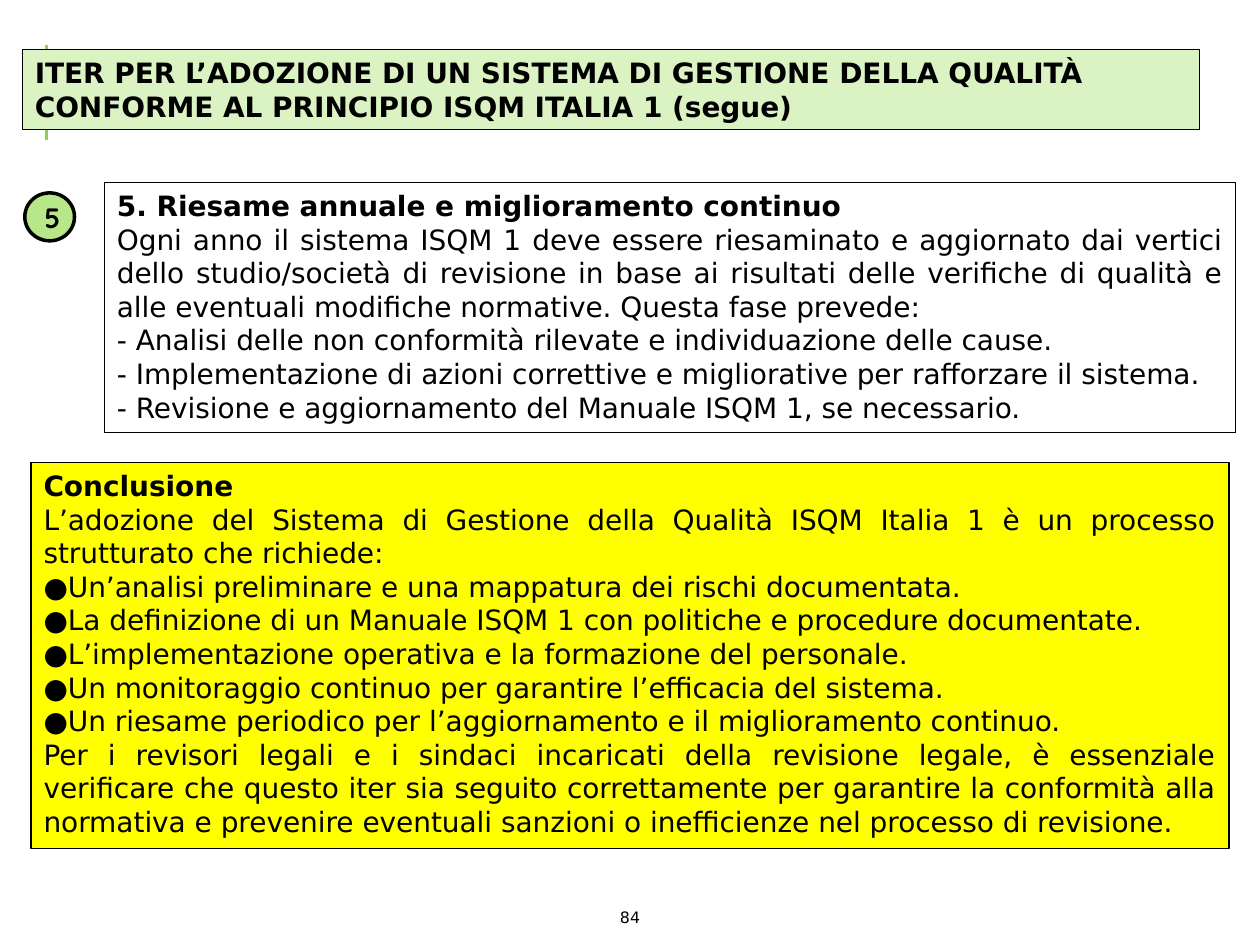
from pptx import Presentation
from pptx.dml.color import RGBColor
from pptx.enum.shapes import MSO_CONNECTOR, MSO_SHAPE
from pptx.enum.text import MSO_ANCHOR, MSO_AUTO_SIZE, PP_ALIGN
from pptx.oxml.ns import qn
from pptx.util import Pt
from lxml import etree

LEFT, CENTER, JUSTIFY = PP_ALIGN.LEFT, PP_ALIGN.CENTER, PP_ALIGN.JUSTIFY
TOP, MIDDLE = MSO_ANCHOR.TOP, MSO_ANCHOR.MIDDLE
RECTANGLE, OVAL = MSO_SHAPE.RECTANGLE, MSO_SHAPE.OVAL

COLORS = {
    "black": "000000",
    "accent": "8CD250",
    "title": "DBF3C2",
    "badge": "B8E789",
    "conclusion": "FFFF00",
}
BODY_FONT, BADGE_FONT = "DejaVu Sans", "Quicksand"

TITLE = ("ITER PER L’ADOZIONE DI UN SISTEMA DI GESTIONE DELLA QUALITÀ "
         "CONFORME AL PRINCIPIO ISQM ITALIA 1 (segue)")
REVIEW = [
    "5. Riesame annuale e miglioramento continuo",
    "Ogni anno il sistema ISQM 1 deve essere riesaminato e aggiornato dai vertici "
    "dello studio/società di revisione in base ai risultati delle verifiche di "
    "qualità e alle eventuali modifiche normative. Questa fase prevede:",
    "- Analisi delle non conformità rilevate e individuazione delle cause.",
    "- Implementazione di azioni correttive e migliorative per rafforzare il sistema.",
    "- Revisione e aggiornamento del Manuale ISQM 1, se necessario.",
]
CONCLUSION = [
    "Conclusione",
    "L’adozione del Sistema di Gestione della Qualità ISQM Italia 1 è un processo "
    "strutturato che richiede:",
    "●Un’analisi preliminare e una mappatura dei rischi documentata.",
    "●La definizione di un Manuale ISQM 1 con politiche e procedure documentate.",
    "●L’implementazione operativa e la formazione del personale.",
    "●Un monitoraggio continuo per garantire l’efficacia del sistema.",
    "●Un riesame periodico per l’aggiornamento e il miglioramento continuo.",
    "Per i revisori legali e i sindaci incaricati della revisione legale, è "
    "essenziale verificare che questo iter sia seguito correttamente per garantire "
    "la conformità alla normativa e prevenire eventuali sanzioni o inefficienze "
    "nel processo di revisione.",
]


def color(name):
    return RGBColor.from_string(COLORS[name])


def write(box, lines, size=16, font=BODY_FONT, align=LEFT, anchor=TOP):
    """Fill the box with one paragraph per line; the first one is bold if it is a heading."""
    frame = box.text_frame
    frame.word_wrap = True
    frame.vertical_anchor = anchor
    for index, line in enumerate(lines):
        para = frame.paragraphs[0] if index == 0 else frame.add_paragraph()
        para.alignment = align
        span = para.add_run()
        span.text = line
        span.font.name = font
        span.font.size = Pt(size)
        span.font.bold = index == 0 and size >= 16
        span.font.color.rgb = color("black")


class Builder:
    def __init__(self, page):
        self.page = page

    def line(self, x1, y1, x2, y2, stroke, width):
        connector = self.page.shapes.add_connector(
            MSO_CONNECTOR.STRAIGHT, Pt(x1), Pt(y1), Pt(x2), Pt(y2))
        connector.line.color.rgb = color(stroke)
        connector.line.width = Pt(width)
        properties = connector._element.find(qn("p:spPr"))
        etree.SubElement(properties, qn("a:effectLst"))

    def shape(self, kind, area, lines, fill=None, width=0.75, grow=False, **style):
        shape = self.page.shapes.add_shape(kind, *map(Pt, area))
        shape.shadow.inherit = False
        if fill:
            shape.fill.solid()
            shape.fill.fore_color.rgb = color(fill)
        else:
            shape.fill.background()
        shape.line.color.rgb = color("black")
        shape.line.width = Pt(width)
        write(shape, lines, **style)
        if grow:
            shape.text_frame.auto_size = MSO_AUTO_SIZE.SHAPE_TO_FIT_TEXT

    def text(self, area, lines, **style):
        write(self.page.shapes.add_textbox(*map(Pt, area)), lines, **style)


def main():
    deck = Presentation()
    deck.slide_width, deck.slide_height = Pt(720), Pt(540)
    builder = Builder(deck.slides.add_slide(deck.slide_layouts[6]))

    builder.line(26.5, 26, 26.5, 80, "accent", 1.5)
    builder.text((340, 515, 40, 14.4), ["84"], size=9, align=CENTER)
    builder.shape(RECTANGLE, (12.8, 28.2, 672.5, 46), [TITLE], fill="title", grow=True)
    builder.shape(OVAL, (14.2, 110.2, 28.4, 27.4), ["5"], fill="badge", width=2,
                  font=BADGE_FONT, align=CENTER, anchor=MIDDLE)
    builder.shape(RECTANGLE, (59.7, 104.2, 646.5, 143), REVIEW, grow=True, align=JUSTIFY)
    builder.shape(RECTANGLE, (17.8, 264.2, 684.5, 220.5), CONCLUSION,
                  fill="conclusion", grow=True, align=JUSTIFY)

    deck.save("out.pptx")


if __name__ == "__main__":
    main()
